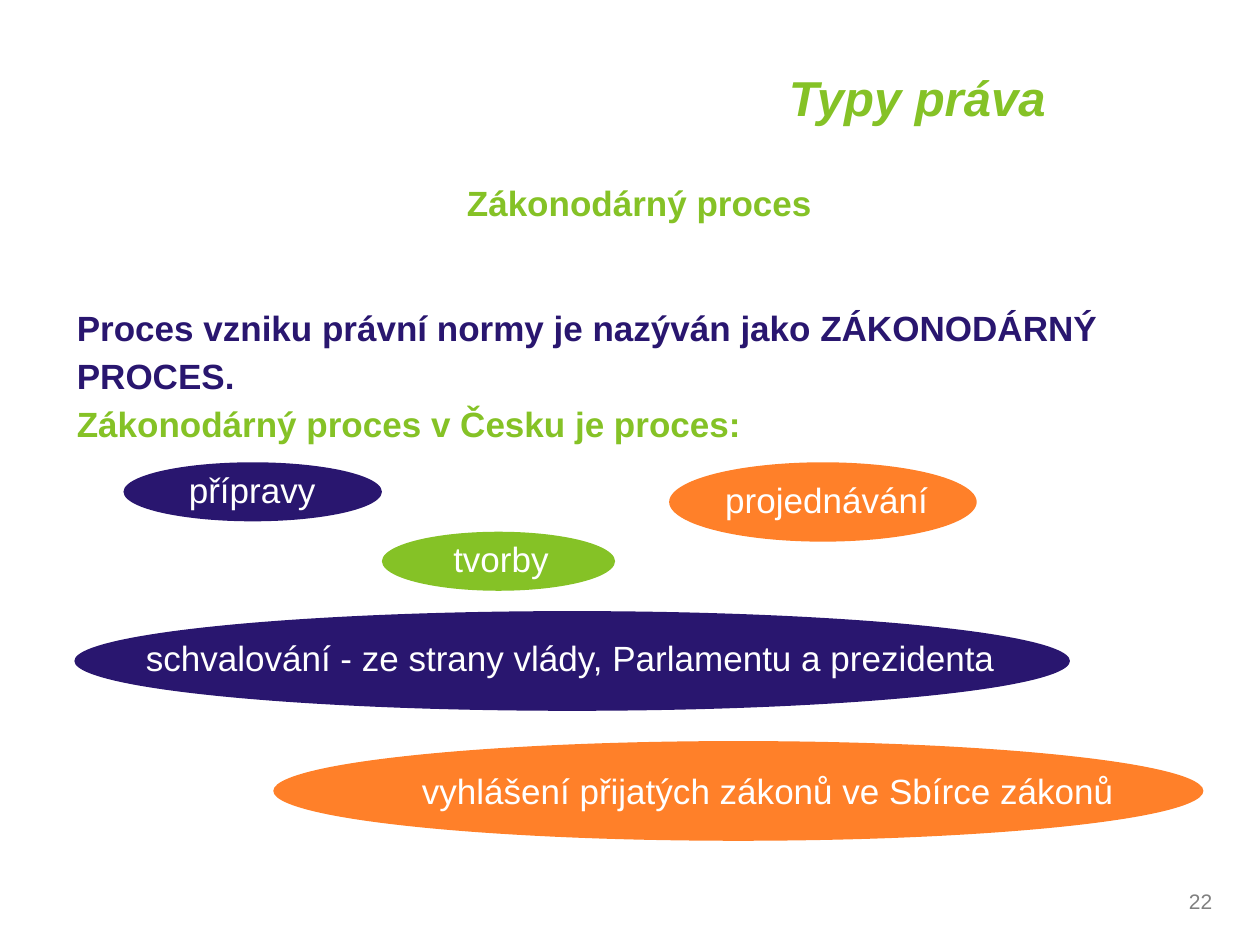
"""Build the slide on the Czech legislative process."""
from pptx import Presentation
from pptx import util as u
from pptx.dml import color
from pptx.enum import shapes, text

NAVY, GREEN, ORANGE, WHITE, GRAY = "29166F", "85C226", "FF8029", "FFFFFF", "808080"
LEFT, CENTER, RIGHT = text.PP_ALIGN.LEFT, text.PP_ALIGN.CENTER, text.PP_ALIGN.RIGHT
TOP, MIDDLE = text.MSO_ANCHOR.TOP, text.MSO_ANCHOR.MIDDLE
GROW = text.MSO_AUTO_SIZE.SHAPE_TO_FIT_TEXT

FRAME = {"word_wrap": True, "vertical_anchor": TOP, "auto_size": text.MSO_AUTO_SIZE.NONE}
HEADING = {"bold": True}

TEXTS = [
    {"place": (18.77, 17.65, 5.92, 1.02), "lines": [("22", GRAY)],
     "font": {"size": u.Pt(12)}, "para": {"alignment": RIGHT},
     "frame": {"vertical_anchor": MIDDLE}},
    {"place": (12.29, 1.17, 12.4, 1.55), "lines": [("Typy práva", GREEN)],
     "font": {"size": u.Pt(28), "bold": True, "italic": True},
     "para": {"alignment": CENTER},
     "frame": {"vertical_anchor": MIDDLE, "word_wrap": False}},
    {"place": (1.09, 3.53, 23.6, 1.22), "lines": [("Zákonodárný proces", GREEN)],
     "font": HEADING, "para": {"alignment": CENTER}},
    {"place": (1.3, 5.92, 23.01, 11),
     "lines": [("Proces vzniku právní normy je nazýván jako ZÁKONODÁRNÝ PROCES.", NAVY),
               ("Zákonodárný proces v Česku je proces:", GREEN)],
     "font": HEADING, "para": {"line_spacing": 1.15}},
]

STAGES = [
    ("přípravy", NAVY, (2.49, 9.32, 5.21, 1.19), (1.91, 9.32, 6.35, 1.12), CENTER),
    ("projednávání", ORANGE, (13.49, 9.32, 6.2, 1.6), (13.49, 9.53, 6.35, 1.12), CENTER),
    ("tvorby", GREEN, (7.7, 10.72, 4.7, 1.19), (7.7, 10.72, 4.8, 1.12), CENTER),
    ("schvalování - ze strany vlády, Parlamentu a prezidenta", NAVY,
     (1.5, 12.32, 20.07, 2.01), (2.69, 12.7, 20.55, 1.12), LEFT),
    ("vyhlášení přijatých zákonů ve Sbírce zákonů", ORANGE,
     (5.51, 14.94, 18.75, 2.01), None, LEFT),
]


def rgb(value):
    """Turn a hex string into a colour."""
    return color.RGBColor.from_string(value)


def apply(target, values):
    """Set every attribute named in a dict."""
    for name, value in values.items():
        setattr(target, name, value)


def write(box, lines, font=None, para=None, frame=None):
    """Fill a box with coloured, formatted paragraphs."""
    apply(box.text_frame, FRAME | (frame or {}))
    for index, (words, ink) in enumerate(lines):
        line = box.text_frame.add_paragraph() if index else box.text_frame.paragraphs[0]
        apply(line, {"alignment": LEFT} | (para or {}))
        span = line.add_run()
        span.text = words
        apply(span.font, {"name": "Arial", "size": u.Pt(20)} | (font or {}))
        span.font.color.rgb = rgb(ink)


def add_text(page, place, **content):
    """Add a text box at a place given in centimetres."""
    write(page.shapes.add_textbox(*map(u.Cm, place)), **content)


def add_ellipse(page, place, fill):
    """Add a filled ellipse without outline or shadow."""
    ellipse = page.shapes.add_shape(shapes.MSO_SHAPE.OVAL, *map(u.Cm, place))
    ellipse.shadow.inherit = False
    ellipse.fill.solid()
    ellipse.fill.fore_color.rgb = rgb(fill)
    ellipse.line.fill.background()
    return ellipse


def main():
    """Create and save the deck."""
    deck = Presentation()
    deck.slide_width, deck.slide_height = u.Cm(25.4), u.Cm(19.05)
    page = deck.slides.add_slide(deck.slide_layouts[6])
    for content in TEXTS:
        add_text(page, **content)
    for words, fill, place, label, align in STAGES:
        ellipse = add_ellipse(page, place, fill)
        content = {"lines": [(words, WHITE)], "para": {"alignment": align}}
        if label:
            add_text(page, label, frame={"auto_size": GROW}, **content)
        else:
            write(ellipse, frame={"vertical_anchor": MIDDLE, "word_wrap": False}, **content)
    deck.save("out.pptx")


if __name__ == "__main__":
    main()
